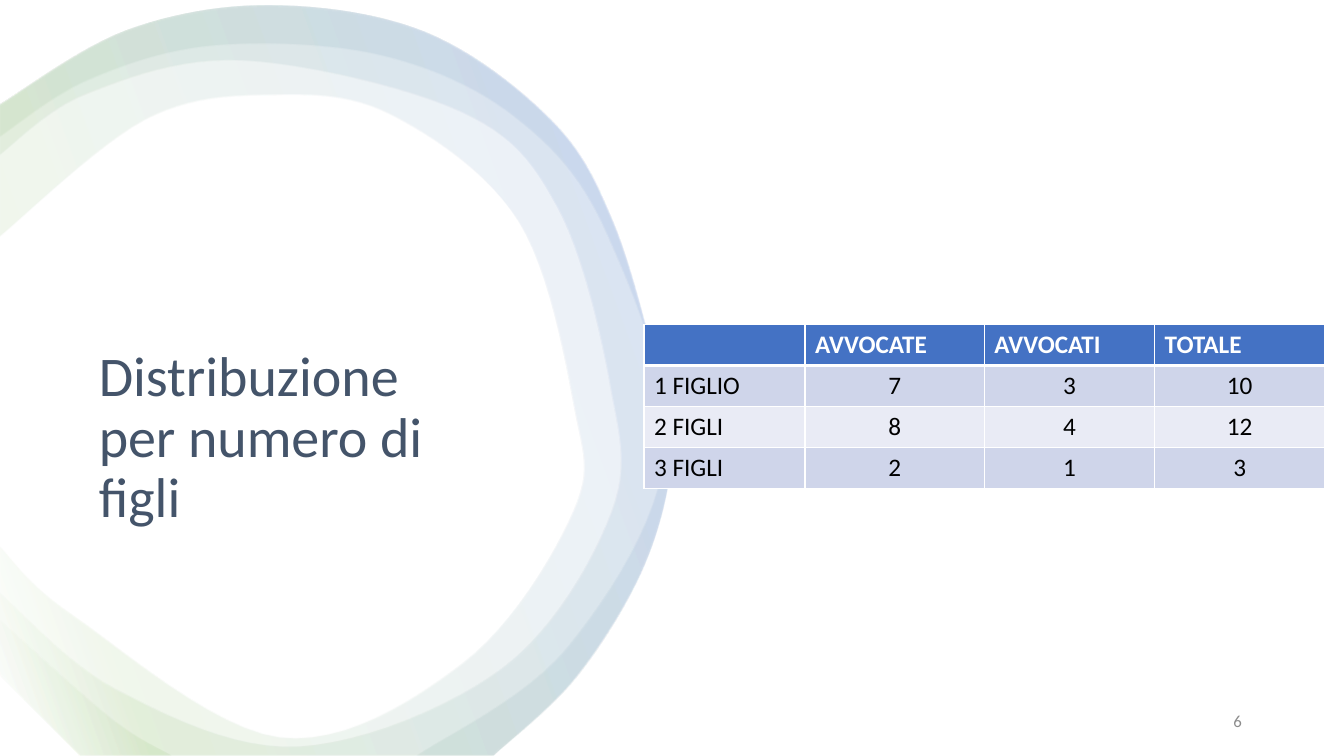
from dataclasses import dataclass

from lxml.etree import SubElement
from pptx import Presentation
from pptx.dml.color import RGBColor as RGB
from pptx.enum.text import MSO_ANCHOR as Anchor, PP_ALIGN as Align
from pptx.oxml import parse_xml
from pptx.oxml.ns import nsdecls, qn
from pptx.util import Cm, Pt


@dataclass(frozen=True)
class Theme:
    font: str = "Calibri"
    title: str = "44546A"
    text: str = "000000"
    muted: str = "8C8C8C"
    white: str = "FFFFFF"
    header: str = "4472C4"
    bands: tuple = ("CFD5EA", "E9EBF5")
    ring_stops: tuple = ((2, "FFFFFF"), (16, "70AD47"), (85, "4472C4"), (100, "FFFFFF"))
    ring_alpha: int = 10
    ring_angle: int = 340
    title_size: int = 40
    table_size: int = 18
    number_size: int = 12


# Ring strokes in hundredths of an inch; all rings share the outer edge
RING_UNIT = 0.0254
OUTER = [(0, 105), (126, 31), (269, 6), (423, 33), (547, 120), (608, 220),
         (652, 368), (667, 450), (640, 560), (573, 671), (490, 750)]
CORNER = [(80, 750), (0, 670)]
WIDE = [(0, 588), (117, 685), (297, 741), (499, 663), (607, 508), (605, 380),
        (553, 206), (458, 112), (241, 61), (87, 94), (0, 155)]
WIDEST = [(0, 542), (73, 611), (278, 732), (460, 658), (569, 508), (570, 405),
          (515, 221), (389, 115), (269, 95), (144, 120), (0, 236)]
THIN = [(414, 750), (563, 643), (660, 448), (601, 230), (511, 117), (379, 56),
        (214, 46), (89, 80), (0, 137)]
THIN_END = [(0, 615), (111, 713), (171, 750)]

# Each ring is a list of contours, each contour a list of strokes
RINGS = [
    [[OUTER, CORNER, WIDE]],
    [[OUTER, CORNER, WIDEST]],
    [[OUTER, THIN], [THIN_END, CORNER]],
]

ROWS = [
    ["", "AVVOCATE", "AVVOCATI", "TOTALE"],
    ["1 FIGLIO", "7", "3", "10"],
    ["2 FIGLI", "8", "4", "12"],
    ["3 FIGLI", "2", "1", "3"],
]


def smooth(points, steps=12):
    """Return points along a Catmull-Rom curve through the given points."""
    ends = [points[0], *points, points[-1]]
    curve = []
    for a, b, c, d in zip(ends, ends[1:], ends[2:], ends[3:]):
        for t in (i / steps for i in range(steps)):
            curve.append(tuple(
                q + t * (r - p + t * (2 * p - 5 * q + 4 * r - s + t * (3 * (q - r) + s - p))) / 2
                for p, q, r, s in zip(a, b, c, d)))
    return curve + [points[-1]]


class SlideBuilder:
    def __init__(self, slide, theme):
        self.slide, self.theme = slide, theme

    def style(self, p, size, color, bold=False, align=Align.LEFT):
        p.alignment = align
        p.font.name, p.font.size, p.font.bold = self.theme.font, Pt(size), bold
        p.font.color.rgb = RGB.from_string(color)

    def text(self, text, left, top, width, height, size, color,
             align=Align.LEFT, anchor=Anchor.TOP, spacing=1.0):
        box = self.slide.shapes.add_textbox(Cm(left), Cm(top), Cm(width), Cm(height))
        tf = box.text_frame
        tf.word_wrap, tf.vertical_anchor = True, anchor
        p = tf.paragraphs[0]
        p.text, p.line_spacing = text, spacing
        self.style(p, size, color, align=align)

    def ring(self, contours):
        builder = None
        for strokes in contours:
            start, *rest = [(Cm(x * RING_UNIT), Cm(y * RING_UNIT))
                            for stroke in strokes for x, y in smooth(stroke)]
            if builder is None:
                builder = self.slide.shapes.build_freeform(*start)
            else:
                builder.move_to(*start)
            builder.add_line_segments(rest, close=True)
        sp = builder.convert_to_shape()
        sp.shadow.inherit = False
        sp.line.fill.background()
        self.gradient(sp)

    def gradient(self, sp):
        th = self.theme
        stops = "".join(
            f'<a:gs pos="{pos * 1000}"><a:srgbClr val="{color}">'
            f'<a:alpha val="{th.ring_alpha * 1000}"/></a:srgbClr></a:gs>'
            for pos, color in th.ring_stops)
        fill = parse_xml(
            f'<a:gradFill {nsdecls("a")} rotWithShape="1"><a:gsLst>{stops}</a:gsLst>'
            f'<a:lin ang="{th.ring_angle * 60000}" scaled="0"/></a:gradFill>')
        sp.element.spPr.find(qn("a:custGeom")).addnext(fill)

    def borders(self, cell, **widths):
        tc_pr = cell._tc.get_or_add_tcPr()
        for side in "LRTB":
            line = SubElement(tc_pr, qn(f"a:ln{side}"), w=str(Pt(widths.get(side, 1))))
            fill = SubElement(line, qn("a:solidFill"))
            SubElement(fill, qn("a:srgbClr"), val=self.theme.white)

    def table(self, rows, left, top, col_widths, row_height):
        th = self.theme
        table = self.slide.shapes.add_table(
            len(rows), len(col_widths), Cm(left), Cm(top),
            Cm(sum(col_widths)), Cm(row_height * len(rows))).table
        for column, width in zip(table.columns, col_widths):
            column.width = Cm(width)
        for i, row in enumerate(rows):
            header = i == 0
            for j, value in enumerate(row):
                cell = table.cell(i, j)
                self.borders(cell, **({"B": 3} if header else {"T": 3} if i == 1 else {}))
                cell.fill.solid()
                cell.fill.fore_color.rgb = RGB.from_string(
                    th.header if header else th.bands[(i - 1) % 2])
                p = cell.text_frame.paragraphs[0]
                p.text = value
                self.style(p, th.table_size, th.white if header else th.text, header,
                           Align.LEFT if header or j == 0 else Align.CENTER)


def main():
    prs = Presentation()
    prs.slide_width, prs.slide_height = Cm(33.87), Cm(19.05)
    th = Theme()
    s = SlideBuilder(prs.slides.add_slide(prs.slide_layouts[6]), th)

    # Background rings
    for contours in RINGS:
        s.ring(contours)

    # Title
    s.text("Distribuzione per numero di figli", 2.24, 8.66, 10.16, 4.95,
           th.title_size, th.title, spacing=0.9)

    # Table of children per group
    s.table(ROWS, 16.23, 8.18, [4.06, 4.52, 4.29, 4.29], 1.03)

    # Slide number
    s.text("6", 23.93, 17.65, 7.62, 1.02, th.number_size, th.muted,
           align=Align.RIGHT, anchor=Anchor.MIDDLE)

    prs.save("out.pptx")


if __name__ == "__main__":
    main()
